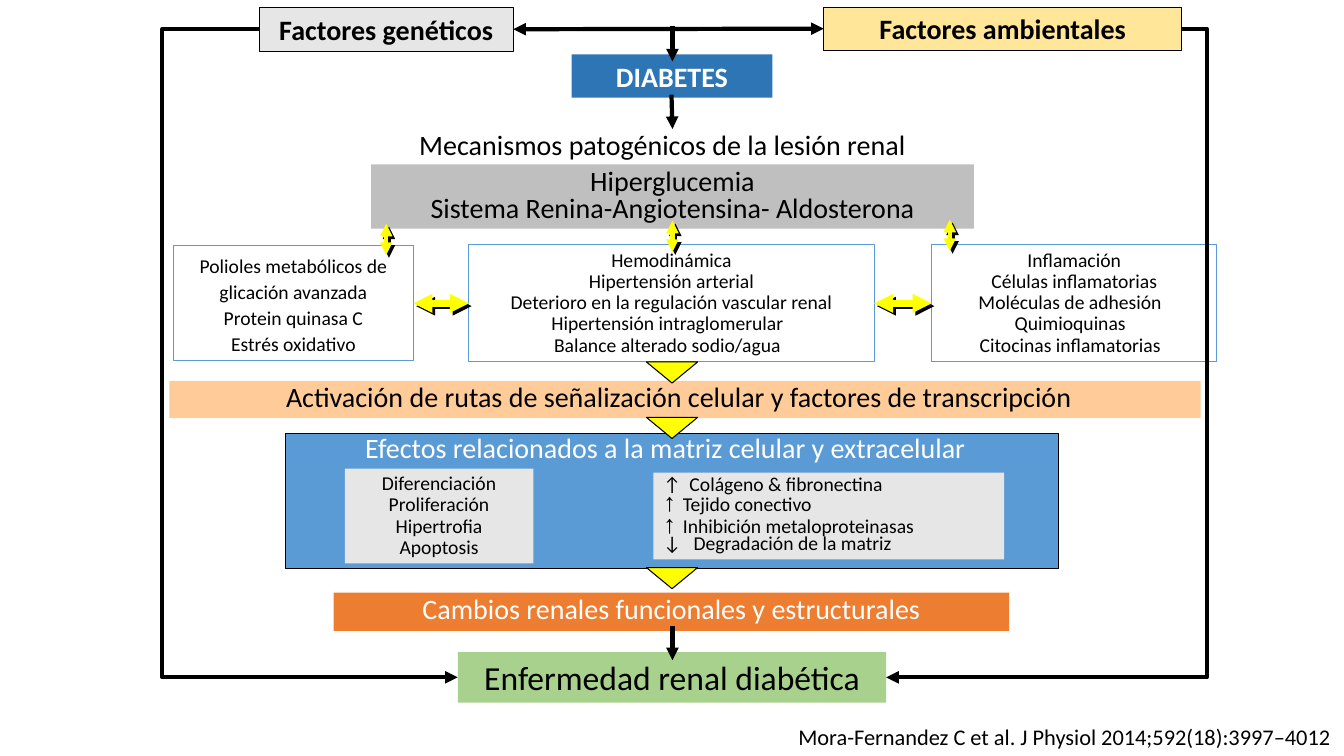
from dataclasses import dataclass

import lxml.etree
import pptx
import pptx.dml.color
import pptx.enum.shapes
import pptx.enum.text
import pptx.oxml.ns
import pptx.util

RGB = pptx.dml.color.RGBColor
ALIGN = pptx.enum.text.PP_ALIGN
ANCHOR = pptx.enum.text.MSO_ANCHOR
SHAPE = pptx.enum.shapes.MSO_SHAPE
LINK = pptx.enum.shapes.MSO_CONNECTOR
qn = pptx.oxml.ns.qn

BLACK = RGB(0x00, 0x00, 0x00)
WHITE = RGB(0xFF, 0xFF, 0xFF)
GRAY = RGB(0xE7, 0xE6, 0xE6)
SILVER = RGB(0xBF, 0xBF, 0xBF)
CREAM = RGB(0xFF, 0xE6, 0x99)
NAVY = RGB(0x2E, 0x75, 0xB6)
BLUE = RGB(0x5B, 0x9B, 0xD5)
GREEN = RGB(0xA9, 0xD1, 0x8E)
PEACH = RGB(0xFF, 0xCC, 0x99)
ORANGE = RGB(0xED, 0x7D, 0x31)
YELLOW = RGB(0xFF, 0xFF, 0x00)

LEFT, RIGHT = 1, 3  # connection sites


def px(n: int) -> int:
    """Turn px, 100 to the inch, into EMU."""
    return pptx.util.Emu(n * 9144)


@dataclass(frozen=True)
class Line:
    text: str
    lead: str = ""  # symbol set larger, in Arial, before the text
    tab: int = 0
    trim: int = 0  # right indent


def rows(*texts: str) -> tuple[Line, ...]:
    return tuple(Line(text) for text in texts)


@dataclass(frozen=True)
class Box:
    name: str
    at: tuple[int, int, int, int]
    lines: tuple[Line, ...] = ()
    fill: RGB | None = None
    edge: RGB | None = None
    size: int = 20
    color: RGB = BLACK
    bold: bool = False
    space: float = 1.0
    align: ALIGN = ALIGN.CENTER
    anchor: ANCHOR = ANCHOR.MIDDLE
    wrap: bool = True
    pad: int = 10  # right inset


@dataclass(frozen=True)
class Arrow:
    start: tuple[int, int]
    end: tuple[int, int]
    color: RGB = BLACK
    width: float = 3
    both: bool = False
    shade: bool = False


@dataclass(frozen=True)
class Join:
    first: str
    side: int
    last: str
    stop: int
    color: RGB = BLACK
    width: float = 3
    both: bool = False
    shade: bool = False
    reach: int = 0  # how far an elbow swings out past its start


BOXES = (
    Box("matrix", (283, 430, 767, 134), fill=BLUE, edge=BLACK),
    Box("cite", (782, 713, 551, 37),
        rows("Mora-Fernandez C et al. J Physiol 2014;592(18):3997–4012"),
        size=16, align=ALIGN.LEFT, anchor=ANCHOR.TOP, wrap=False),
    Box("genes", (257, 7, 252, 44), rows("Factores genéticos"),
        GRAY, BLACK, bold=True),
    Box("world", (817, 7, 355, 43), rows("Factores ambientales"),
        CREAM, BLACK, bold=True),
    Box("diabetes", (567, 54, 199, 43), rows("DIABETES"),
        NAVY, color=WHITE, bold=True),
    Box("kidney", (454, 647, 425, 50), rows("Enfermedad renal diabética"),
        GREEN, size=24),
    Box("title", (0, 122, 1314, 43),
        rows("Mecanismos patogénicos de la lesión renal")),
    Box("sugar", (368, 163, 598, 64),
        rows("Hiperglucemia", "Sistema Renina-Angiotensina- Aldosterona"),
        SILVER, space=0.8),
    Box("polyol", (172, 244, 238, 114),
        rows("Polioles metabólicos de glicación avanzada",
             "Protein quinasa C", "Estrés oxidativo"),
        edge=BLUE, size=14, space=1.1),
    Box("flow", (465, 243, 402, 116),
        (*rows("Hemodinámica", "Hipertensión arterial",
               "Deterioro en la regulación vascular renal"),
         Line("Hipertensión intraglomerular", trim=8),
         Line("Balance alterado sodio/agua")),
        edge=BLUE, size=14, space=0.9),
    Box("signal", (168, 378, 1023, 37),
        rows("Activación de rutas de señalización celular y factores de transcripción"),
        PEACH, space=0.8, pad=22),
    Box("flame", (924, 243, 283, 116),
        (*rows("Inflamación", "Células inflamatorias"),
         Line("Moléculas de adhesión", trim=8),
         *rows("Quimioquinas", "Citocinas inflamatorias")),
        edge=BLUE, size=14, space=0.9),
    Box("effect", (290, 428, 740, 38),
        rows("Efectos relacionados a la matriz celular y extracelular"),
        color=WHITE, space=0.8),
    Box("cell", (342, 465, 187, 94),
        rows("Diferenciación", "Proliferación", "Hipertrofia", "Apoptosis"),
        GRAY, size=14, space=0.9),
    Box("tissue", (648, 469, 348, 86),
        (Line("↑\tColágeno & fibronectina", tab=26),
         Line("Tejido conectivo", lead="↑ "),
         Line("Inhibición metaloproteinasas", lead="↑ "),
         Line("↓\tDegradación de la matriz", tab=30)),
        GRAY, size=14, space=0.7, align=ALIGN.LEFT),
    Box("change", (331, 588, 670, 38),
        rows("Cambios renales funcionales y estructurales"),
        ORANGE, color=WHITE, space=0.8),
)
GLOW = dict(color=YELLOW, both=True, shade=True)
LINKS = (
    Join("genes", RIGHT, "world", LEFT, both=True),
    Arrow((667, 26), (667, 61)),
    Arrow((666, 94), (667, 128)),
    Join("polyol", RIGHT, "flow", LEFT, width=4.5, **GLOW),
    Join("flow", RIGHT, "flame", LEFT, width=4.5, **GLOW),
    *(Arrow((x, y), (x, y + 31), **GLOW)
      for x, y in ((383, 222), (667, 219), (942, 218))),
    Arrow((667, 621), (667, 655)),
    Join("genes", LEFT, "kidney", LEFT, reach=96),
    Join("world", RIGHT, "kidney", RIGHT, reach=25),
)
WEDGES = (359, 414, 563)


def write(frame, lines: tuple[Line, ...], *, size: int, color: RGB, bold: bool,
          space: float, align: ALIGN) -> None:
    for i, line in enumerate(lines):
        para = frame.add_paragraph() if i else frame.paragraphs[0]
        props = para._p.get_or_add_pPr()
        if line.trim:
            props.set("marR", str(px(line.trim)))
        if line.tab:
            tabs = lxml.etree.SubElement(props, qn("a:tabLst"))
            lxml.etree.SubElement(tabs, qn("a:tab"), pos=str(px(line.tab)), algn="l")
        para.alignment = align
        para.line_spacing = space
        for text, face, high in ((line.lead, "Arial", 18), (line.text, "Calibri", size)):
            if text:
                run = para.add_run()
                run.text = text
                run.font.name = face
                run.font.size = pptx.util.Pt(high)
                run.font.bold = bold
                run.font.color.rgb = color


def paint(shape, fill: RGB | None, edge: RGB | None) -> None:
    shape.shadow.inherit = False
    if fill is None:
        shape.fill.background()
    else:
        shape.fill.solid()
        shape.fill.fore_color.rgb = fill
    if edge is None:
        shape.line.fill.background()
    else:
        shape.line.color.rgb = edge
        shape.line.width = pptx.util.Pt(0.75)


def draw_box(shapes, box: Box):
    at = [px(n) for n in box.at]
    if box.fill is None and box.edge is None:
        shape = shapes.add_textbox(*at)
    else:
        shape = shapes.add_shape(SHAPE.RECTANGLE, *at)
        paint(shape, box.fill, box.edge)
    frame = shape.text_frame
    frame.word_wrap = box.wrap
    frame.vertical_anchor = box.anchor
    frame.margin_right = px(box.pad)
    write(frame, box.lines, size=box.size, color=box.color, bold=box.bold,
          space=box.space, align=box.align)
    return shape


def draw_link(shapes, link: Arrow | Join, made: dict) -> None:
    if isinstance(link, Join):
        kind = LINK.ELBOW if link.reach else LINK.STRAIGHT
        wire = shapes.add_connector(kind, 0, 0, 0, 0)
        wire.begin_connect(made[link.first], link.side)
        wire.end_connect(made[link.last], link.stop)
        if link.reach:
            bend = round(-100000 * px(link.reach) / wire.width)
            guides = wire._element.spPr.find(qn("a:prstGeom")).get_or_add_avLst()
            lxml.etree.SubElement(guides, qn("a:gd"), name="adj1", fmla=f"val {bend}")
    else:
        wire = shapes.add_connector(
            LINK.STRAIGHT, *(px(n) for n in link.start + link.end))
    wire.line.color.rgb = link.color
    wire.line.width = pptx.util.Pt(link.width)
    for tag in ("a:headEnd", "a:tailEnd") if link.both else ("a:tailEnd",):
        lxml.etree.SubElement(wire.line._get_or_add_ln(), qn(tag), type="triangle")
    glow = lxml.etree.SubElement(wire._element.spPr, qn("a:effectLst"))
    if link.shade:
        cast = lxml.etree.SubElement(glow, qn("a:outerShdw"), dist="35921",
                                     dir="2700000", algn="ctr", rotWithShape="0")
        lxml.etree.SubElement(cast, qn("a:srgbClr"), val=str(BLACK))


def main() -> None:
    deck = pptx.Presentation()
    deck.slide_width, deck.slide_height = px(1333), px(750)
    shapes = deck.slides.add_slide(deck.slide_layouts[6]).shapes
    made = {box.name: draw_box(shapes, box) for box in BOXES}
    for link in LINKS:
        draw_link(shapes, link, made)
    for y in WEDGES:
        wedge = shapes.add_shape(SHAPE.ISOSCELES_TRIANGLE, px(641), px(y), px(51), px(21))
        wedge.rotation = 180
        paint(wedge, YELLOW, BLACK)
    deck.save("out.pptx")


if __name__ == "__main__":
    main()
